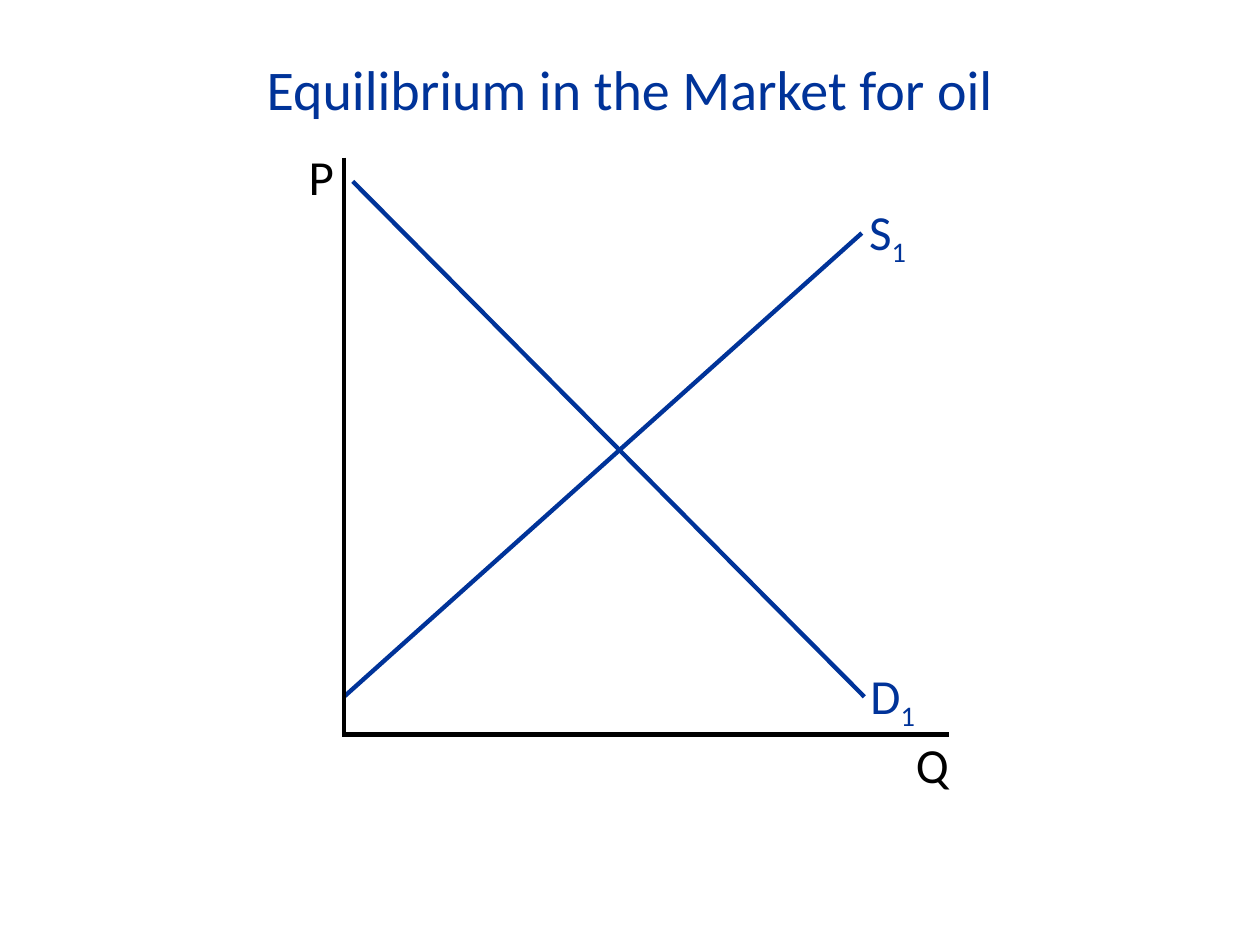
from lxml.etree import SubElement
from pptx import Presentation
from pptx.dml.color import RGBColor
from pptx.enum.shapes import MSO_CONNECTOR
from pptx.enum.text import MSO_ANCHOR, PP_ALIGN
from pptx.oxml.ns import qn
from pptx.util import Inches, Pt

BLUE, BLACK = "003399", "000000"
FONT = "Calibri"

TITLE = "Equilibrium in the Market for oil"
ORIGIN_X, ORIGIN_Y = 2.73, 5.83

# start, end, colour
LINES = [
    ((ORIGIN_X, 5.53), (6.84, 1.85), BLUE),            # supply
    ((ORIGIN_X, 1.25), (ORIGIN_X, 5.85), BLACK),       # price axis
    ((ORIGIN_X, ORIGIN_Y), (7.53, ORIGIN_Y), BLACK),   # quantity axis
    ((2.8, 1.44), (6.86, 5.53), BLUE),                 # demand
]

# letter, subscript, box (left, top, width, height), colour, line spacing
LABELS = [
    ("D", "1", (6.81, 5.23, 0.58, 0.57), BLUE, 1.0),
    ("S", "1", (6.8, 1.55, 0.58, 0.57), BLUE, 1.0),
    ("Q", "", (7.17, 5.78, 0.51, 0.57), BLACK, 1.0),
    ("P", "", (2.35, 1.2, 0.45, 0.49), BLACK, 0.8),
]


def rgb(color):
    return RGBColor.from_string(color)


def add_text(slide, text, box, size, color):
    """Add a wrapped one-paragraph text box and return its text frame."""
    frame = slide.shapes.add_textbox(*map(Inches, box)).text_frame
    frame.word_wrap = True
    paragraph = frame.paragraphs[0]
    paragraph.text = text
    style_run(paragraph.runs[0], size, color)
    return frame


def style_run(run, size, color):
    run.font.name = FONT
    run.font.size = Pt(size)
    run.font.color.rgb = rgb(color)


def add_label(slide, letter, subscript, box, color, spacing):
    paragraph = add_text(slide, letter, box, 28, color).paragraphs[0]
    paragraph.line_spacing = spacing
    if subscript:
        run = paragraph.add_run()
        run.text = subscript
        style_run(run, 28, color)
        run.font._element.set("baseline", "-25000")


def add_line(slide, start, end, color):
    line = slide.shapes.add_connector(
        MSO_CONNECTOR.STRAIGHT, *map(Inches, start + end))
    line.line.color.rgb = rgb(color)
    line.line.width = Pt(2.5)
    SubElement(line._element.spPr, qn("a:effectLst"))


def main():
    prs = Presentation()
    prs.slide_width, prs.slide_height = Inches(10), Inches(7.5)
    slide = prs.slides.add_slide(prs.slide_layouts[6])

    title = add_text(slide, TITLE, (0.7, 0.38, 8.6, 0.64), 32, BLUE)
    title.vertical_anchor = MSO_ANCHOR.MIDDLE
    title.paragraphs[0].alignment = PP_ALIGN.CENTER

    for line in LINES:
        add_line(slide, *line)
    for label in LABELS:
        add_label(slide, *label)

    prs.save("out.pptx")


if __name__ == "__main__":
    main()
